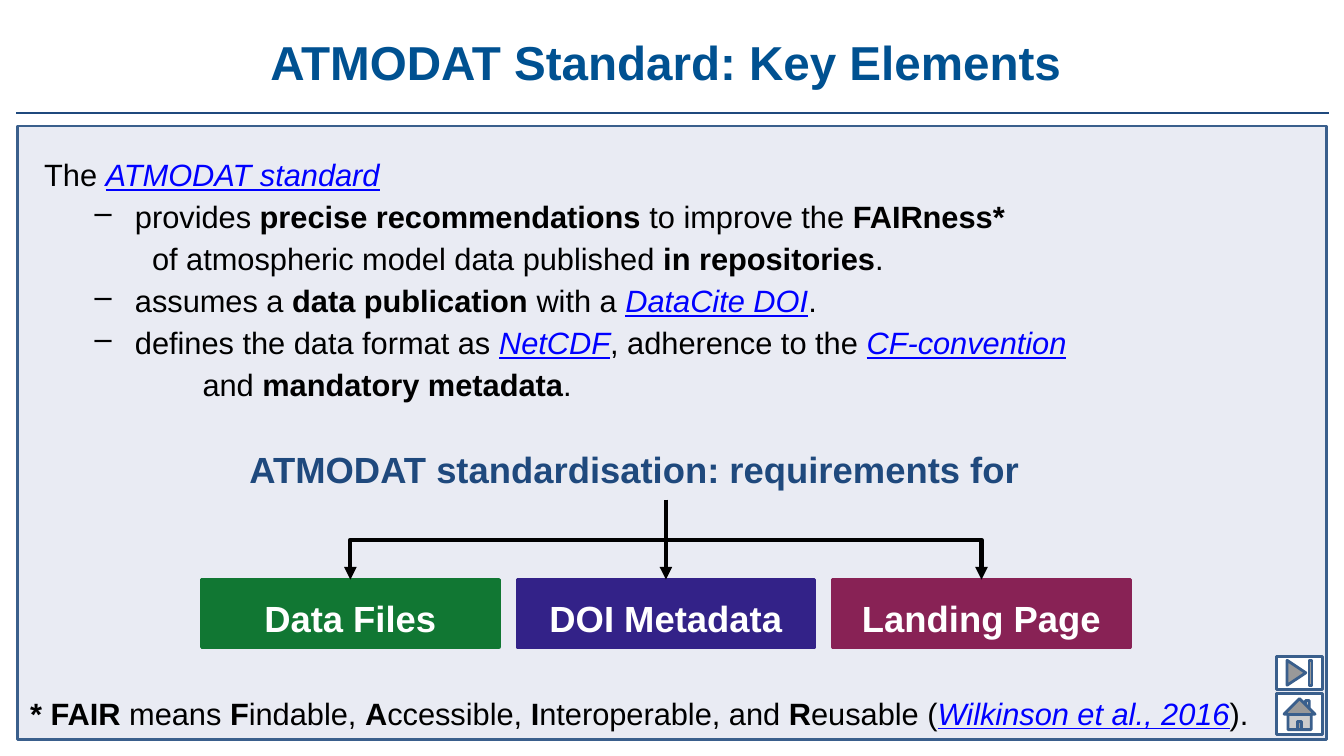
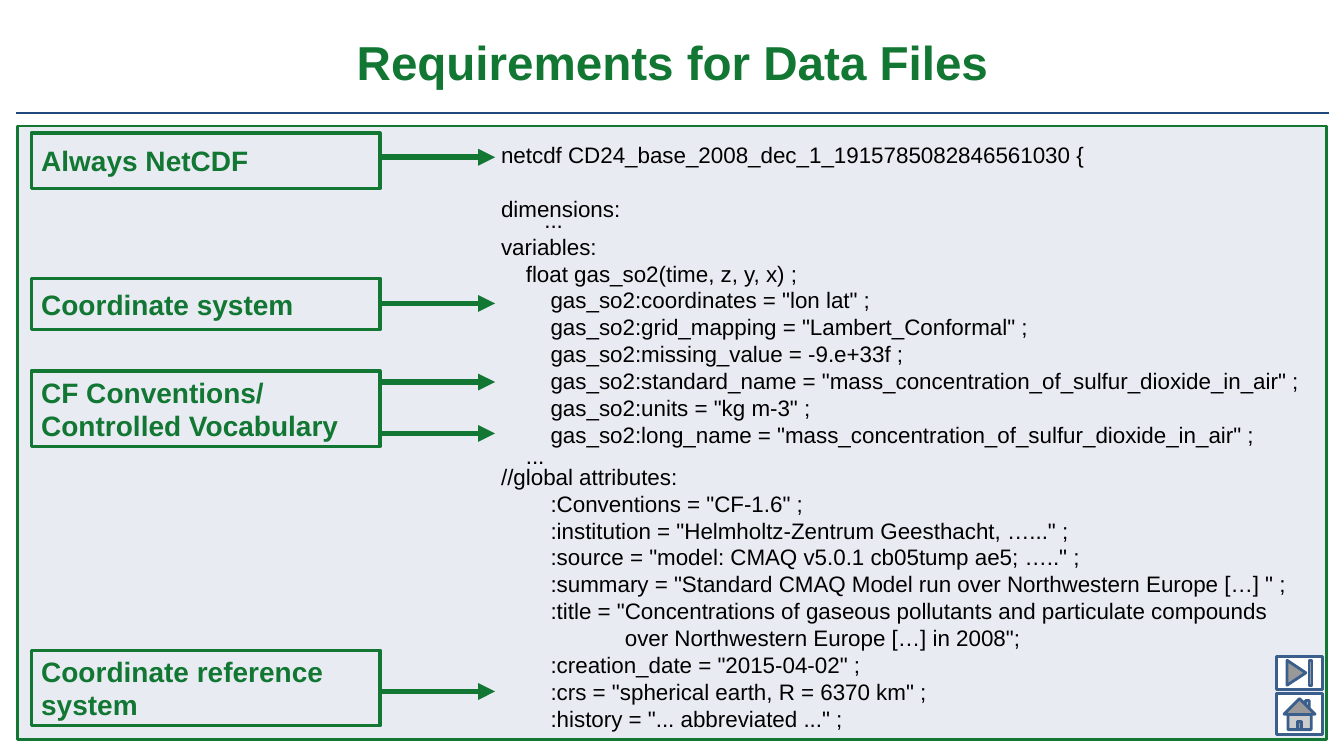
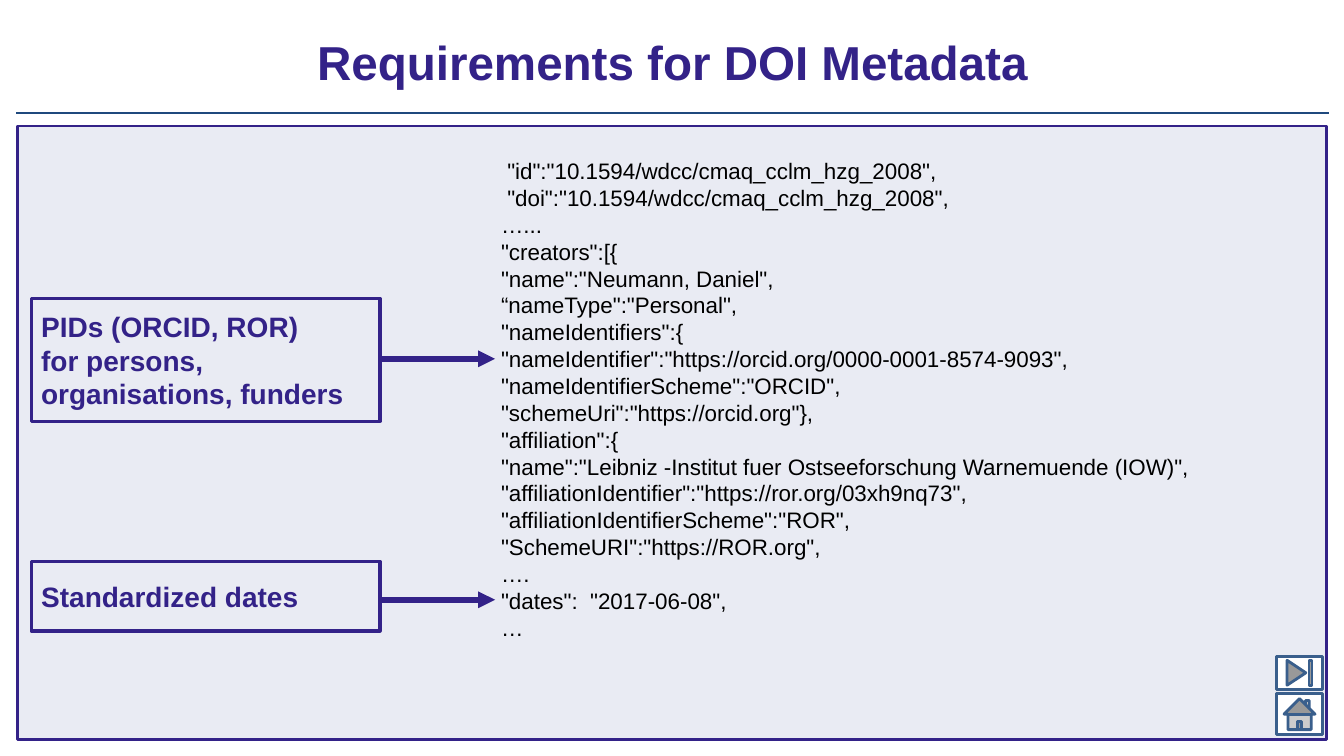
import pptx
import pptx.util
import pptx.dml.color
import pptx.enum.dml
import pptx.enum.shapes
import pptx.enum.text
import pptx.oxml
import pptx.oxml.ns
import lxml.etree

Inches, Pt = pptx.util.Inches, pptx.util.Pt
SHAPE = pptx.enum.shapes.MSO_SHAPE
CONNECTOR = pptx.enum.shapes.MSO_CONNECTOR
ALIGN = pptx.enum.text.PP_ALIGN
ANCHOR = pptx.enum.text.MSO_ANCHOR

FONT = "Arial"
LEADING = 1.2  # line height as a multiple of the font size
BLUE, GREEN, INDIGO, WINE = "005191", "117733", "332288", "882255"
NAVY, STEEL, LINK = "1F497D", "3A5F8C", "0000FF"
PANEL, BLACK, WHITE = "DBDFEC", "000000", "FFFFFF"

# Slide 1: each paragraph is (left margin, has a dash, runs of (text, style))
ELEMENTS = [
    (0, False, [("The ", ""), ("ATMODAT standard", "link")]),
    (0.9, True, [("provides ", ""), ("precise recommendations", "bold"),
                 (" to improve the ", ""), ("FAIRness*", "bold")]),
    (1.07, False, [("of atmospheric model data published ", ""),
                   ("in repositories", "bold"), (".", "")]),
    (0.9, True, [("assumes a ", ""), ("data publication", "bold"),
                 (" with a ", ""), ("DataCite DOI", "link"), (".", "")]),
    (0.9, True, [("defines the data format as ", ""), ("NetCDF", "link"),
                 (", adherence to the ", ""), ("CF-convention", "link")]),
    (1.57, False, [("and ", ""), ("mandatory metadata", "bold"), (".", "")]),
]
FAIR_NOTE = [
    ("* FAIR", "bold"), (" means ", ""), ("F", "bold"), ("indable, ", ""),
    ("A", "bold"), ("ccessible, ", ""), ("I", "bold"),
    ("nteroperable, and ", ""), ("R", "bold"), ("eusable (", ""),
    ("Wilkinson et al., 2016", "link"), (").", ""),
]
TARGETS = [("Data Files", GREEN), ("DOI Metadata", INDIGO),
           ("Landing Page", WINE)]

NETCDF_HEADER = [
    'netcdf CD24_base_2008_dec_1_1915785082846561030 {',
    'dimensions:',
    '       ...',
    'variables:',
    '    float gas_so2(time, z, y, x) ;',
    '        gas_so2:coordinates = "lon lat" ;',
    '        gas_so2:grid_mapping = "Lambert_Conformal" ;',
    '        gas_so2:missing_value = -9.e+33f ;',
    '        gas_so2:standard_name = "mass_concentration_of_sulfur_dioxide_in_air" ;',
    '        gas_so2:units = "kg m-3" ;',
    '        gas_so2:long_name = "mass_concentration_of_sulfur_dioxide_in_air" ;',
    '    ...',
    '//global attributes:',
    '        :Conventions = "CF-1.6" ;',
    '        :institution = "Helmholtz-Zentrum Geesthacht, …..." ;',
    '        :source = "model: CMAQ v5.0.1 cb05tump ae5; ….." ;',
    '        :summary = "Standard CMAQ Model run over Northwestern Europe […] " ;',
    '        :title = "Concentrations of gaseous pollutants and particulate compounds',
    '                    over Northwestern Europe […] in 2008";',
    '        :creation_date = "2015-04-02" ;',
    '        :crs = "spherical earth, R = 6370 km" ;',
    '        :history = "... abbreviated ..." ;',
]

DOI_RECORD = [
    ' "id":"10.1594/wdcc/cmaq_cclm_hzg_2008",',
    ' "doi":"10.1594/wdcc/cmaq_cclm_hzg_2008",',
    '…...',
    '"creators":[{',
    '"name":"Neumann, Daniel",',
    '“nameType":"Personal",',
    '"nameIdentifiers":{',
    '"nameIdentifier":"https://orcid.org/0000-0001-8574-9093",',
    '"nameIdentifierScheme":"ORCID",',
    '"schemeUri":"https://orcid.org"},',
    '"affiliation":{',
    '"name":"Leibniz -Institut fuer Ostseeforschung Warnemuende (IOW)",',
    '"affiliationIdentifier":"https://ror.org/03xh9nq73",',
    '"affiliationIdentifierScheme":"ROR",',
    '"SchemeURI":"https://ROR.org",',
    '….',
    '"dates":  "2017-06-08",',
    '…',
]

# Slides 2 and 3: labels are (text, top, height, heights of the arrows)
REQUIREMENTS = [
    dict(title="Requirements for Data Files", color=GREEN,
         code=NETCDF_HEADER, top=1.32, width=8.24, height=6,
         leading={"       ...": 8, "    ...": 15, "//global attributes:": 15},
         gaps={"dimensions:": 19.2},
         labels=[("Always NetCDF", 1.32, 0.55, [1.56]),
                 ("Coordinate system", 2.76, 0.51, [3.01]),
                 ("CF Conventions/\vControlled Vocabulary", 3.68, 0.75,
                  [3.79, 4.3]),
                 ("Coordinate reference system", 6.45, 0.75, [6.86])]),
    dict(title="Requirements for DOI Metadata", color=INDIGO,
         code=DOI_RECORD, top=1.48, width=7.36, height=4.93,
         leading={}, gaps={},
         labels=[("PIDs (ORCID, ROR)\vfor persons, organisations, funders",
                  2.96, 1.22, [3.56]),
                 ("Standardized dates", 5.57, 0.69, [5.95])]),
]


def rgb(color):
    return pptx.dml.color.RGBColor.from_string(color)


def set_font(font, size, color, bold=False):
    font.name, font.size, font.bold = FONT, Pt(size), bold
    font.color.rgb = rgb(color)


def set_frame(tf, insets, anchor=ANCHOR.TOP):
    """Insets run left, top, right, bottom."""
    tf.word_wrap = True
    tf.vertical_anchor = anchor
    (tf.margin_left, tf.margin_top,
     tf.margin_right, tf.margin_bottom) = map(Inches, insets)


def write(sp, text, size, color, bold=True, align=ALIGN.LEFT,
          insets=(0.1, 0.05, 0.1, 0.05), anchor=ANCHOR.TOP, leading=LEADING):
    tf = sp.text_frame
    set_frame(tf, insets, anchor)
    tf.text = text
    for p in tf.paragraphs:
        p.alignment = align
        p.line_spacing = Pt(size * leading)
        for r in p.runs:
            set_font(r.font, size, color, bold)


def write_runs(p, runs, size=22):
    for text, style in runs:
        r = p.add_run()
        r.text = text
        is_link = style == "link"
        set_font(r.font, size, LINK if is_link else BLACK, style == "bold")
        r.font.italic = r.font.underline = is_link


def add_box(s, at, line, width, fill=None, kind=SHAPE.RECTANGLE):
    sp = s.shapes.add_shape(kind, *map(Inches, at))
    sp.shadow.inherit = False
    sp.line.color.rgb, sp.line.width = rgb(line), Pt(width)
    if fill:
        sp.fill.solid()
        sp.fill.fore_color.rgb = rgb(fill)
    else:
        sp.fill.background()
    return sp


def add_text(s, at):
    return s.shapes.add_textbox(*map(Inches, at))


def add_line(s, start, end, color, width, arrow=True,
             kind=CONNECTOR.STRAIGHT):
    c = s.shapes.add_connector(kind, *map(Inches, (*start, *end)))
    c.line.color.rgb, c.line.width = rgb(color), Pt(width)
    if arrow:
        ln = c._element.spPr.find(pptx.oxml.ns.qn("a:ln"))
        lxml.etree.SubElement(ln, pptx.oxml.ns.qn("a:tailEnd"),
                              type="triangle")
    lxml.etree.SubElement(c._element.spPr, pptx.oxml.ns.qn("a:effectLst"))
    return c


def add_down_elbow(s, start, end, color, width):
    """Elbow arrow that leaves and arrives vertically: a turned box."""
    (x0, y0), (x1, y1) = start, end
    mid_x, mid_y = (x0 + x1) / 2, (y0 + y1) / 2
    half_w, half_h = abs(x1 - x0) / 2, (y1 - y0) / 2
    side = -1 if x1 > x0 else 1
    c = add_line(s, (mid_x - side * half_h, mid_y - half_w),
                 (mid_x + side * half_h, mid_y + half_w),
                 color, width, kind=CONNECTOR.ELBOW)
    xfrm = c._element.spPr.find(pptx.oxml.ns.qn("a:xfrm"))
    xfrm.set("rot", str((90 if side > 0 else 270) * 60000))


def add_slide(prs, title, color, panel_line):
    """Blank slide with the rule, panel and title."""
    s = prs.slides.add_slide(prs.slide_layouts[6])
    add_line(s, (13.18, 1.12), (0.16, 1.12), NAVY, 1.5, arrow=False)
    panel = add_box(s, (0.17, 1.25, 12.99, 6.09), panel_line, 2, PANEL)
    srgb = panel._element.spPr.find(".//" + pptx.oxml.ns.qn("a:srgbClr"))
    lxml.etree.SubElement(srgb, pptx.oxml.ns.qn("a:alpha"), val="60000")
    write(add_text(s, (0.17, 0.28, 13, 0.67)), title, 34, color,
          align=ALIGN.CENTER)
    return s


def add_navigation(s):
    for kind, top, height in ((SHAPE.ACTION_BUTTON_HOME, 6.88, 0.41),
                              (SHAPE.ACTION_BUTTON_END, 6.51, 0.33)):
        add_box(s, (12.66, top, 0.46, height), STEEL, 2, WHITE, kind)


def add_elements_slide(prs):
    s = add_slide(prs, "ATMODAT Standard: Key Elements ", BLUE, STEEL)

    box_w, box_h, box_top, pitch = 2.95, 0.67, 5.75, 3.13
    middle = len(TARGETS) // 2
    first_left = 2
    trunk = (first_left + middle * pitch + box_w / 2, 4.96)
    for i, (name, color) in enumerate(TARGETS):
        left = first_left + i * pitch
        sp = add_box(s, (left, box_top, box_w, box_h), color, 2.25, color)
        write(sp, name, 26, WHITE, align=ALIGN.CENTER, insets=[0.1] * 4,
              leading=1.15 * LEADING)
        draw = add_line if i == middle else add_down_elbow
        draw(s, trunk, (left + box_w / 2, box_top), BLACK, 3)

    tf = add_text(s, (0.34, 1.45, 12.82, 2.64)).text_frame
    set_frame(tf, (0.1, 0.05, 0.1, 0.05))
    for i, (margin, dash, runs) in enumerate(ELEMENTS):
        p = tf.add_paragraph() if i else tf.paragraphs[0]
        p.line_spacing = Pt(30)
        pPr = p._p.get_or_add_pPr()
        pPr.set("marL", str(Inches(margin)))
        pPr.set("indent", str(Inches(-0.4 if dash else 0)))
        if dash:
            lxml.etree.SubElement(pPr, pptx.oxml.ns.qn("a:buChar"), char="–")
        write_runs(p, runs)

    tf = add_text(s, (0.2, 6.84, 12.45, 0.48)).text_frame
    set_frame(tf, (0.1, 0.05, 0.1, 0.05))
    tf.paragraphs[0].line_spacing = Pt(22 * LEADING)
    write_runs(tf.paragraphs[0], FAIR_NOTE)

    write(add_text(s, (1.69, 4.34, 9.21, 0.62)),
          "ATMODAT standardisation: requirements for", 26, NAVY,
          align=ALIGN.CENTER, insets=[0] * 4, anchor=ANCHOR.MIDDLE)
    add_navigation(s)


def add_requirements_slide(prs, req):
    color = req["color"]
    s = add_slide(prs, req["title"], color, color)

    sp = add_text(s, (4.89, req["top"], req["width"], req["height"]))
    write(sp, "\n".join(req["code"]), 16, BLACK, bold=False,
          insets=(0.08, 0.08, 0, 0))
    for p in sp.text_frame.paragraphs:
        if p.text in req["leading"]:
            p.line_spacing = Pt(req["leading"][p.text])
        if p.text in req["gaps"]:
            p.space_before = Pt(req["gaps"][p.text])

    left, width = 0.31, 3.46
    for text, top, height, arrows in req["labels"]:
        sp = add_box(s, (left, top, width, height), color, 2.25)
        write(sp, text, 20, color, insets=[0.1] * 4, anchor=ANCHOR.MIDDLE)
        for y in arrows:
            add_line(s, (left + width, y), (4.91, y), color, 4)
    add_navigation(s)


def main():
    prs = pptx.Presentation()
    prs.slide_width, prs.slide_height = Inches(13.33), Inches(7.5)
    add_elements_slide(prs)
    for req in REQUIREMENTS:
        add_requirements_slide(prs, req)
    prs.save("out.pptx")


if __name__ == "__main__":
    main()
